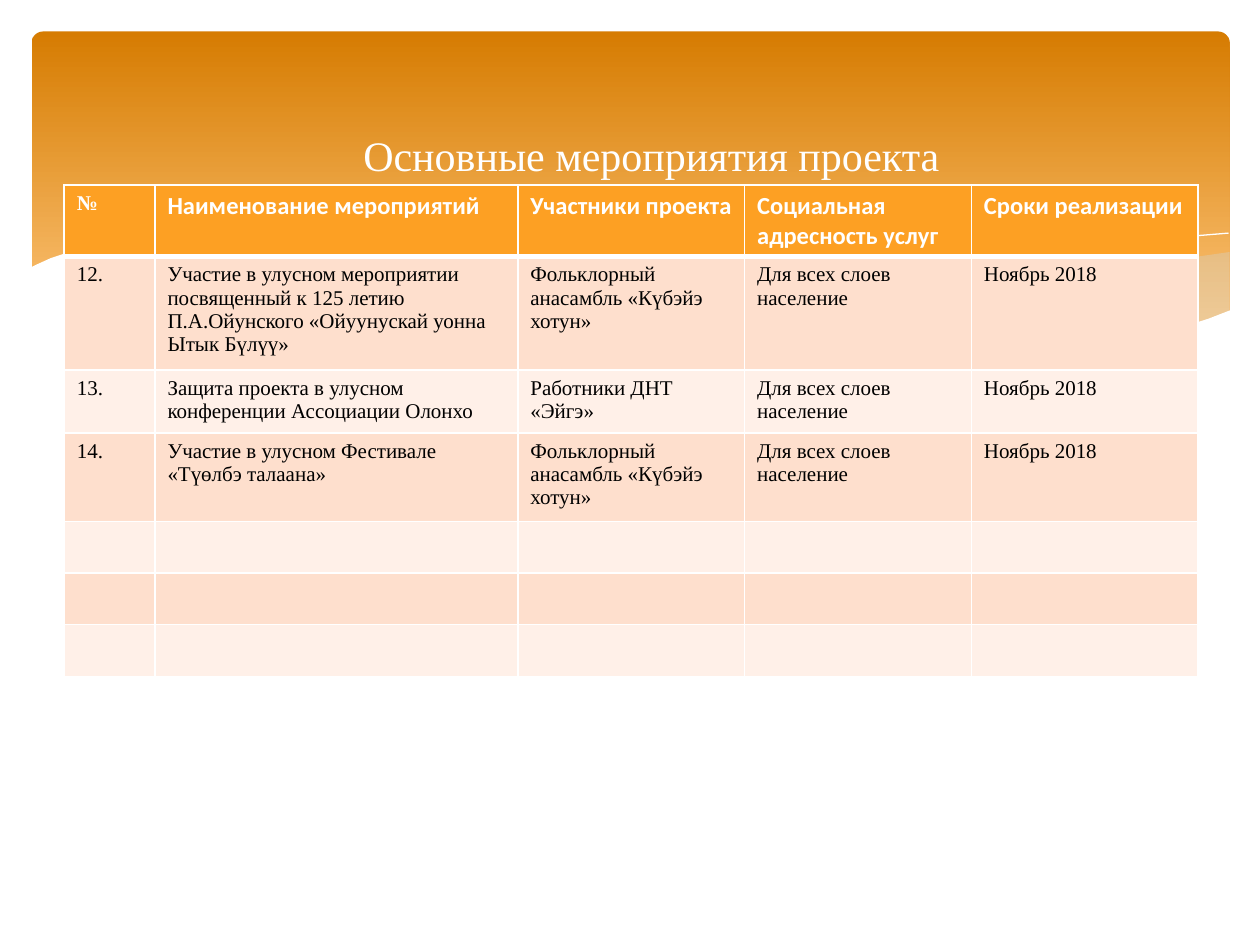
from lxml import etree
from pptx import Presentation
from pptx.dml.color import RGBColor
from pptx.enum.shapes import MSO_SHAPE
from pptx.enum.text import MSO_ANCHOR, PP_ALIGN
from pptx.oxml.ns import qn
from pptx.util import Inches, Pt

ROUNDED = MSO_SHAPE.ROUNDED_RECTANGLE
MIDDLE = MSO_ANCHOR.MIDDLE
CENTER = PP_ALIGN.CENTER

WHITE = "FFFFFF"
TITLE = "Основные мероприятия проекта"
TITLE_FORMAT = {"name": "Times New Roman", "size": Pt(24), "color": WHITE}
NUMBER_FORMAT = {"name": "Times New Roman", "size": Pt(12), "bold": True, "color": WHITE}
HEADER_FORMAT = {"name": "Calibri", "size": Pt(14), "bold": True, "color": WHITE}
BODY_FORMAT = {"name": "Times New Roman", "size": Pt(12), "bold": False, "color": "000000"}

HEADER_FILL = "FDA023"
BAND_FILLS = ("FEDFCD", "FFF0E8")
COLUMN_WIDTHS = (0.72, 2.88, 1.8, 1.8, 1.8)
ROW_HEIGHTS = (0.25, 0.86, 0.41, 0.41, 0.41, 0.41, 0.41)
ENSEMBLE = "Фольклорный анасамбль «Күбэйэ хотун»"
AUDIENCE = "Для всех слоев население"
DATE = "Ноябрь 2018"
ROWS = [
    ("№", "Наименование мероприятий", "Участники проекта",
     "Социальная адресность услуг", "Сроки реализации"),
    ("12.", "Участие в улусном мероприятии посвященный к 125 летию "
     "П.А.Ойунского «Ойуунускай уонна Ытык Бүлүү»", ENSEMBLE, AUDIENCE, DATE),
    ("13.", "Защита проекта в улусном конференции Ассоциации Олонхо",
     "Работники ДНТ «Эйгэ»", AUDIENCE, DATE),
    ("14.", "Участие в улусном Фестивале «Түөлбэ талаана»", ENSEMBLE, AUDIENCE, DATE),
    ("",) * 5,
    ("",) * 5,
    ("",) * 5,
]

RIGHT_WAVE = [
    (9.76, 2), (9.48, 2.04), (9.21, 2.1), (8.91, 2.16), (8.61, 2.23), (8.05, 2.37),
    (7.53, 2.48), (7.06, 2.57), (6.61, 2.65), (6.91, 2.69), (7.19, 2.72), (7.45, 2.75),
    (7.81, 2.77), (8.03, 2.78), (8.35, 2.77), (8.63, 2.75), (8.89, 2.72), (9.13, 2.67),
    (9.35, 2.62), (9.49, 2.57), (9.63, 2.52), (9.76, 2.47),
]
MIDDLE_WAVE = [
    (8.93, 2.73), (8.66, 2.69), (8.07, 2.6), (7.41, 2.47), (6.68, 2.31), (6.29, 2.22),
    (5.84, 2.11), (5.41, 2.03), (5.02, 1.96), (4.65, 1.91), (4.2, 1.87), (3.8, 1.85),
    (3.61, 1.85), (3.28, 1.87), (2.86, 1.91), (3.23, 1.96), (3.62, 2.03), (4.04, 2.11),
    (4.49, 2.22), (4.91, 2.32), (5.66, 2.48), (6.18, 2.58), (6.65, 2.66), (7.09, 2.72),
    (7.48, 2.76), (7.85, 2.78), (8.28, 2.78), (8.57, 2.77), (8.76, 2.75),
]
LONG_LINE = [
    (3.09, 1.95), (3.28, 1.92), (3.53, 1.89), (3.87, 1.87), (4.33, 1.87), (4.69, 1.89),
    (5.1, 1.92), (5.56, 1.97), (6.08, 2.04), (6.65, 2.13), (7.27, 2.26), (7.95, 2.41),
    (8.31, 2.51), (8.69, 2.61), (9.07, 2.72),
]
SHORT_LINE = [
    (6.13, 2.57), (6.53, 2.46), (6.95, 2.35), (7.48, 2.23), (8.06, 2.1), (8.66, 1.99),
    (8.95, 1.94), (9.24, 1.9), (9.51, 1.87), (9.75, 1.85),
]
WHITE_WAVE = [
    (9.77, 2.46), (9.59, 2.53), (9.4, 2.59), (9.2, 2.65), (8.99, 2.69), (8.75, 2.73),
    (8.5, 2.75), (8.09, 2.77), (7.78, 2.76), (7.44, 2.74), (7.08, 2.7), (6.68, 2.65),
    (6.26, 2.58), (5.79, 2.5), (5.29, 2.39), (4.75, 2.27), (4.18, 2.13), (3.65, 2.02),
    (3.16, 1.94), (2.71, 1.88), (2.3, 1.85), (1.93, 1.84), (1.61, 1.84), (1.32, 1.86),
    (1.06, 1.89), (0.85, 1.93), (0.67, 1.97), (0.52, 2.01), (0.4, 2.05), (0.29, 2.1),
    (0.23, 2.13), (0.23, 3.29), (9.77, 3.29),
]
WAVES = [
    (RIGHT_WAVE, "CCDDEA", 29),
    (MIDDLE_WAVE, "CCDDEA", 40),
    (LONG_LINE, None, 100),
    (SHORT_LINE, None, 100),
    (WHITE_WAVE, WHITE, 100),
]


def color(value):
    """Turn a hex string into a colour."""
    return RGBColor.from_string(value)


def write(frame, text, formats):
    """Put one formatted run into a text frame and return its paragraph."""
    paragraph = frame.paragraphs[0]
    span = paragraph.add_run()
    span.text = text
    for name, value in formats.items():
        if name == "color":
            span.font.color.rgb = color(value)
        else:
            setattr(span.font, name, value)
    return paragraph


def add_banner(page):
    """Draw the rounded gradient banner."""
    banner = page.shapes.add_shape(ROUNDED, Inches(0.25), Inches(0.25), Inches(9.51), Inches(2.7))
    banner.adjustments[0] = 0.034
    banner.shadow.inherit = False
    banner.line.fill.background()
    banner.fill.gradient()
    banner.fill.gradient_angle = 270
    for stop, (position, value) in zip(banner.fill.gradient_stops, ((0, "D67C02"), (0.9, "FEC67B"))):
        stop.position = position
        stop.color.rgb = color(value)


def add_wave(page, points, fill, opacity):
    """Draw a filled wave, or an open white line when there is no fill."""
    start, *rest = [(Inches(x), Inches(y)) for x, y in points]
    builder = page.shapes.build_freeform(*start)
    builder.add_line_segments(rest, close=fill is not None)
    wave = builder.convert_to_shape()
    wave.shadow.inherit = False
    if fill is None:
        wave.fill.background()
        wave.line.color.rgb = color(WHITE)
        wave.line.width = Pt(0)
        return
    wave.line.fill.background()
    wave.fill.solid()
    wave.fill.fore_color.rgb = color(fill)
    if opacity < 100:
        tint = wave.fill._xPr.find(".//" + qn("a:srgbClr"))
        etree.SubElement(tint, qn("a:alpha"), val=str(opacity * 1000))


def add_borders(cell, widths):
    """Give a cell white borders of the given widths in points."""
    properties = cell._tc.get_or_add_tcPr()
    for place, (side, width) in enumerate(widths.items()):
        border = etree.Element(qn("a:ln" + side), w=str(Pt(width)))
        solid = etree.SubElement(border, qn("a:solidFill"))
        etree.SubElement(solid, qn("a:srgbClr"), val=WHITE)
        properties.insert(place, border)


def add_events(page):
    """Build the banded table of events."""
    table = page.shapes.add_table(
        len(ROWS), len(COLUMN_WIDTHS), Inches(0.51), Inches(1.47),
        Inches(sum(COLUMN_WIDTHS)), Inches(sum(ROW_HEIGHTS))).table
    for column, width in zip(table.columns, COLUMN_WIDTHS):
        column.width = Inches(width)
    for row, height in zip(table.rows, ROW_HEIGHTS):
        row.height = Inches(height)
    for i, texts in enumerate(ROWS):
        for j, text in enumerate(texts):
            cell = table.cell(i, j)
            cell.fill.solid()
            cell.fill.fore_color.rgb = color(BAND_FILLS[(i - 1) % 2] if i else HEADER_FILL)
            add_borders(cell, {"L": 1, "R": 1, "T": 3 if i == 1 else 1, "B": 1 if i else 3})
            if text:
                header = HEADER_FORMAT if j else NUMBER_FORMAT
                write(cell.text_frame, text, BODY_FORMAT if i else header)


def main():
    """Build the slide and save it."""
    deck = Presentation()
    deck.slide_width, deck.slide_height = Inches(10), Inches(7.5)
    page = deck.slides.add_slide(deck.slide_layouts[6])
    add_banner(page)
    for points, fill, opacity in WAVES:
        add_wave(page, points, fill, opacity)
    box = page.shapes.add_textbox(Inches(0.67), Inches(0.54), Inches(9), Inches(1.37))
    box.text_frame.word_wrap = True
    box.text_frame.vertical_anchor = MIDDLE
    write(box.text_frame, TITLE, TITLE_FORMAT).alignment = CENTER
    add_events(page)
    deck.save("out.pptx")


if __name__ == "__main__":
    main()
